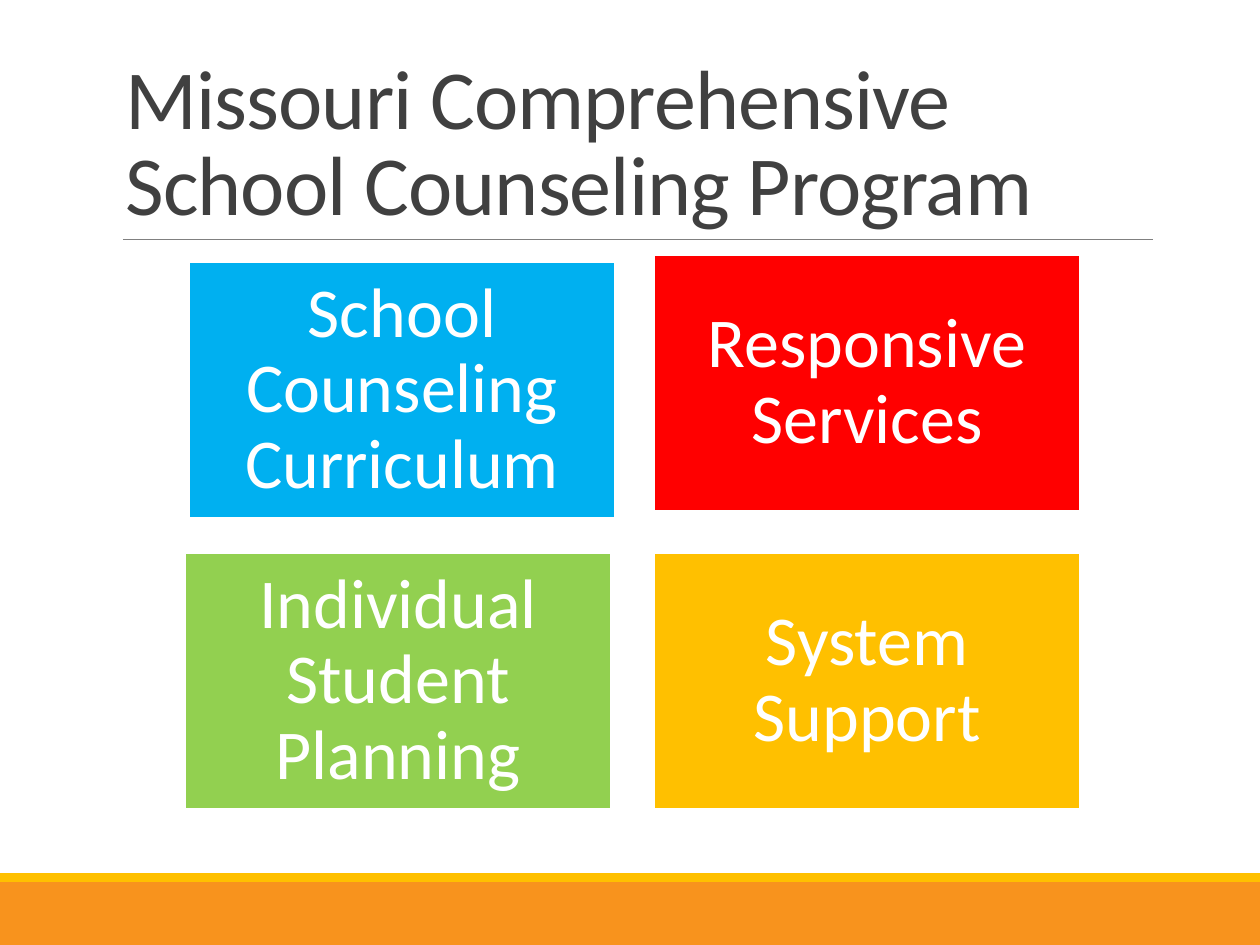
from dataclasses import dataclass
from pptx import Presentation
from pptx.dml.color import RGBColor
from pptx.enum.shapes import MSO_CONNECTOR, MSO_SHAPE
from pptx.enum.text import MSO_ANCHOR, PP_ALIGN
from pptx.oxml.xmlchemy import OxmlElement
from pptx.util import Inches, Pt


@dataclass(frozen=True)
class Theme:
    font: str = "Calibri"
    title: int = 48
    label: int = 40
    ink: str = "404040"
    rule: str = "808080"
    white: str = "FFFFFF"
    blue: str = "00B0F0"
    red: str = "FF0000"
    green: str = "92D050"
    gold: str = "FFC000"
    orange: str = "F8931D"


THEME = Theme()
SCALE = Inches(1) / 126
WIDE, HIGH = 1260, 945
TILE = (426, 256)


def px(*sizes):
    return [round(size * SCALE) for size in sizes]


def color(code):
    return RGBColor.from_string(code)


def add_rect(slide, box, fill):
    rect = slide.shapes.add_shape(MSO_SHAPE.RECTANGLE, *px(*box))
    rect.shadow.inherit = False
    rect.fill.solid()
    rect.fill.fore_color.rgb = color(fill)
    rect.line.fill.background()
    return rect


def set_text(shape, text, size, ink, space):
    frame = shape.text_frame
    frame.word_wrap = True
    frame.text = text
    para = frame.paragraphs[0]
    para.line_spacing = space
    font = para.runs[0].font
    font.name = THEME.font
    font.size = Pt(size)
    font.color.rgb = color(ink)
    return frame


def add_title(slide, box, text):
    title = slide.shapes.add_textbox(*px(*box))
    frame = set_text(title, text, THEME.title, THEME.ink, 0.85)
    frame.vertical_anchor = MSO_ANCHOR.BOTTOM
    frame.paragraphs[0].runs[0].font._element.set("spc", "-50")


def add_rule(slide, left, right, top):
    ends = px(left, top, right, top)
    rule = slide.shapes.add_connector(MSO_CONNECTOR.STRAIGHT, *ends)
    rule.line.color.rgb = color(THEME.rule)
    rule.line.width = Pt(0.5)
    rule._element.spPr.append(OxmlElement("a:effectLst"))


def add_tile(slide, spot, fill, text):
    tile = add_rect(slide, (*spot, *TILE), fill)
    tile.line.color.rgb = color(THEME.white)
    tile.line.width = Pt(1.25)
    frame = set_text(tile, text, THEME.label, THEME.white, 0.9)
    frame.vertical_anchor = MSO_ANCHOR.MIDDLE
    frame.paragraphs[0].alignment = PP_ALIGN.CENTER
    for side in ("left", "top", "right", "bottom"):
        setattr(frame, f"margin_{side}", px(21)[0])


def main():
    deck = Presentation()
    deck.slide_width, deck.slide_height = px(WIDE, HIGH)
    slide = deck.slides.add_slide(deck.slide_layouts[6])

    add_rect(slide, (0, 882, WIDE, 63), THEME.orange)
    add_rect(slide, (0, 873, WIDE, 9), THEME.gold)
    add_rule(slide, 123, 1153, 239)
    add_title(slide, (113, 39, 1040, 200),
              "Missouri Comprehensive School Counseling Program")

    tiles = [
        ((189, 262), THEME.blue, "School Counseling Curriculum"),
        ((654, 255), THEME.red, "Responsive Services"),
        ((185, 553), THEME.green, "Individual Student Planning"),
        ((654, 553), THEME.gold, "System Support"),
    ]
    for spot, fill, text in tiles:
        add_tile(slide, spot, fill, text)

    deck.save("out.pptx")


if __name__ == "__main__":
    main()
